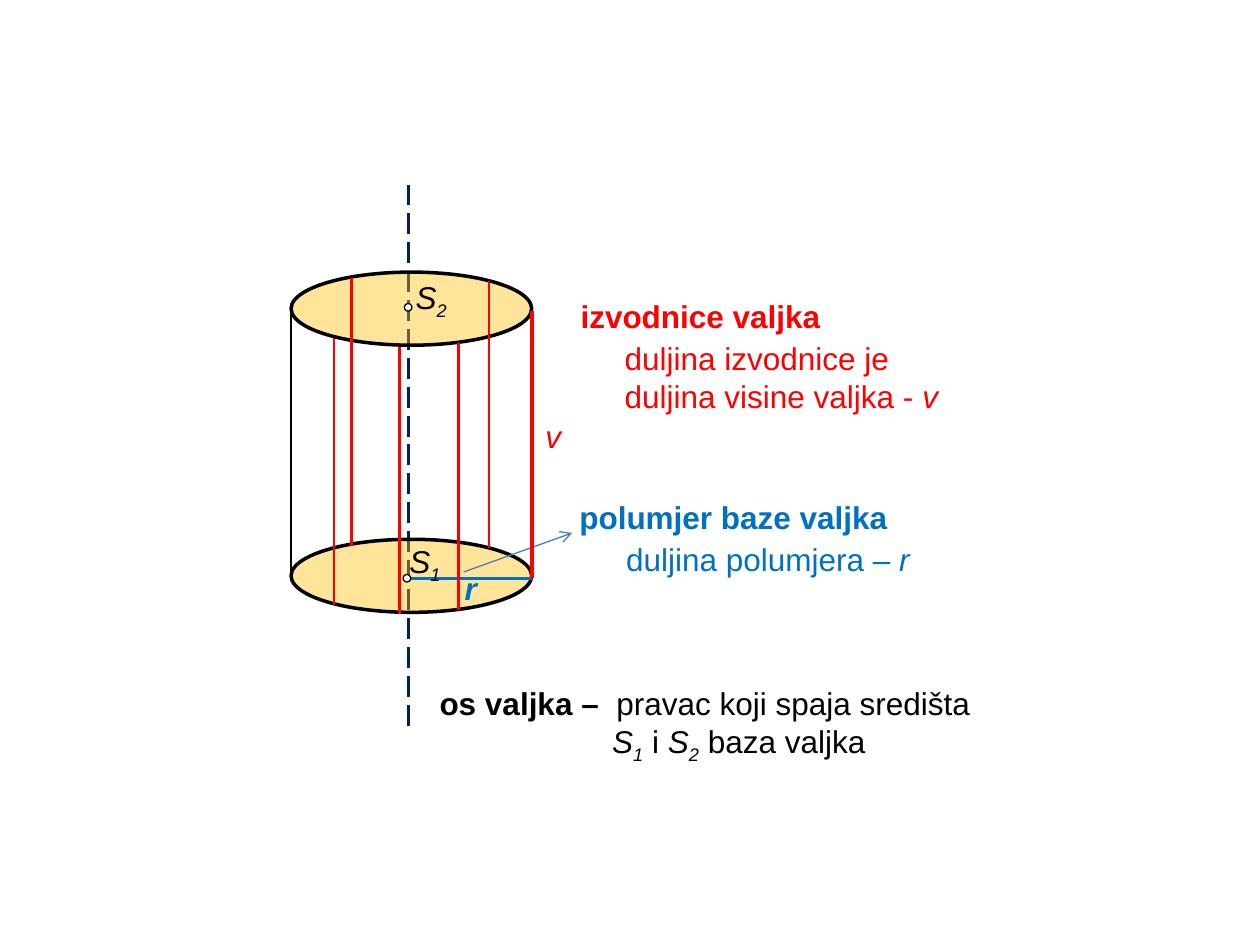
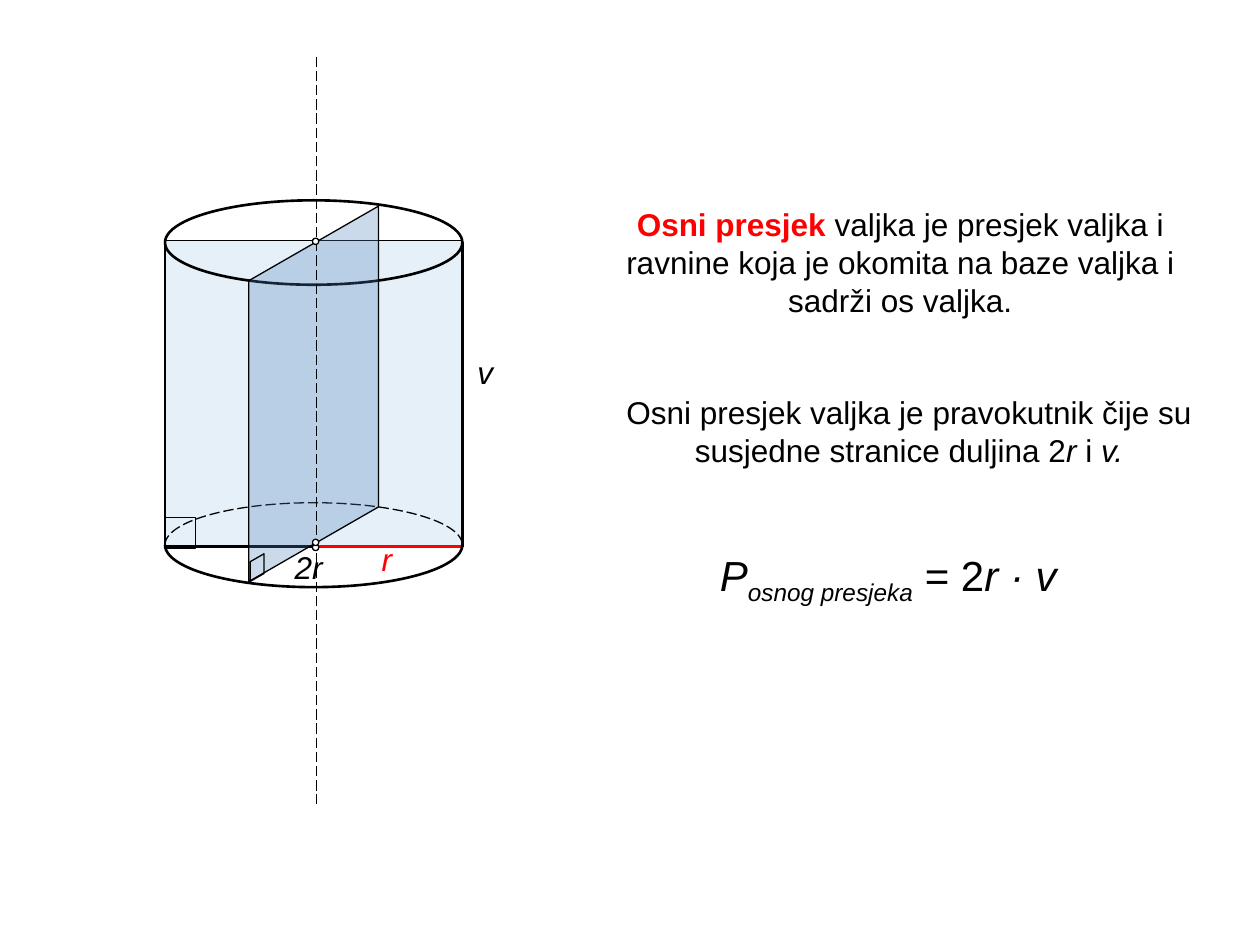
"""Build two slides about the parts and the axial section of a cylinder."""
from dataclasses import dataclass

from lxml.etree import SubElement
from pptx import Presentation
from pptx.dml.color import RGBColor
from pptx.enum.dml import MSO_LINE
from pptx.enum.shapes import MSO_CONNECTOR, MSO_SHAPE
from pptx.enum.text import MSO_AUTO_SIZE, PP_ALIGN
from pptx.oxml.ns import qn
from pptx.util import Inches, Pt


@dataclass(frozen=True)
class Theme:
    """Hold the colours, font, type sizes and line widths of the deck."""

    font: str = "Arial"
    body: int = 18
    formula: int = 24
    black: str = "000000"
    white: str = "FFFFFF"
    red: str = "FF0000"
    blue: str = "0070C0"
    navy: str = "002060"
    amber: str = "FFC000"
    steel: str = "4F81BD"
    arrow: str = "4B7EBC"
    thin: float = 0.75
    medium: float = 1.5
    thick: float = 2
    heavy: float = 2.25


@dataclass(frozen=True)
class Box:
    """Describe a region in inches."""

    left: float
    top: float
    width: float
    height: float

    def inner(self, x, y, width, height):
        """Return a box placed relative to this one."""
        return Box(self.left + x, self.top + y, width, height)

    def lengths(self):
        """Return the four measures as slide lengths."""
        return [Inches(n) for n in (self.left, self.top, self.width, self.height)]


THEME = Theme()


def set_line(line, colour, width, dashed=False):
    """Give a line its colour, width and dash."""
    line.color.rgb = RGBColor.from_string(colour)
    line.width = Pt(width)
    if dashed:
        line.dash_style = MSO_LINE.LONG_DASH


def add_line(page, box, start, end, colour=THEME.black, width=THEME.medium,
             dashed=False, arrow=False):
    """Draw a straight line between two points of a box."""
    x1, y1, x2, y2 = (Inches(n) for n in (
        box.left + start[0], box.top + start[1], box.left + end[0], box.top + end[1]))
    connector = page.shapes.add_connector(MSO_CONNECTOR.STRAIGHT, x1, y1, x2, y2)
    set_line(connector.line, colour, width, dashed)
    if arrow:
        SubElement(connector.line._get_or_add_ln(), qn("a:tailEnd"), type="arrow")
    SubElement(connector._element.spPr, qn("a:effectLst"))


def add_outline(page, kind, box, width=THEME.thin, fill=None, opacity=100, dashed=False):
    """Draw a preset shape with a black outline and an optional fill."""
    shape = page.shapes.add_shape(kind, *box.lengths())
    shape.shadow.inherit = False
    set_line(shape.line, THEME.black, width, dashed)
    if fill is None:
        shape.fill.background()
        return shape
    shape.fill.solid()
    shape.fill.fore_color.rgb = RGBColor.from_string(fill)
    if opacity < 100:
        colour = shape._element.spPr.find(qn("a:solidFill"))[0]
        SubElement(colour, qn("a:alpha"), val=str(opacity * 1000))
    return shape


def add_arc(page, box, start, end, width=THEME.medium, dashed=False):
    """Draw part of an ellipse between two angles in degrees."""
    arc = add_outline(page, MSO_SHAPE.ARC, box, width, dashed=dashed)
    for index, angle in enumerate((start, end)):
        arc.adjustments[index] = angle * 0.6


def add_slanted(page, box, **style):
    """Draw an upright parallelogram by turning and flipping the preset."""
    shape = add_outline(page, MSO_SHAPE.PARALLELOGRAM, box, **style)
    shape.adjustments[0] = 0.575
    shape.rotation = 90
    shape._element.spPr.get_or_add_xfrm().set("flipV", "1")


def add_point(page, box, x, y, size):
    """Mark a point of a box with a small white circle."""
    add_outline(page, MSO_SHAPE.OVAL, box.inner(x, y, size, size), fill=THEME.white)


def add_text(page, box, spans, colour=THEME.black, size=THEME.body,
             align=None, wrap=True, hanging=0):
    """Write spans of (text, marks), where marks are b, i, s (subscript) and r (red)."""
    frame = page.shapes.add_textbox(*box.lengths()).text_frame
    frame.word_wrap = wrap
    frame.auto_size = MSO_AUTO_SIZE.SHAPE_TO_FIT_TEXT
    para = frame.paragraphs[0]
    para.alignment = align
    if hanging:
        properties = para._p.get_or_add_pPr()
        properties.set("marL", str(Inches(hanging)))
        properties.set("indent", str(-Inches(hanging)))
    for text, marks in spans:
        span = para.add_run()
        span.text = text
        font = span.font
        font.name, font.size = THEME.font, Pt(size)
        font.bold, font.italic = "b" in marks, "i" in marks
        font.color.rgb = RGBColor.from_string(THEME.red if "r" in marks else colour)
        if "s" in marks:
            span._r.get_or_add_rPr().set("baseline", "-25000")


def draw_cylinder(page, box):
    """Draw the cylinder with its axis, bases, radius and generators."""
    base, height = 0.58, 2.12
    add_line(page, box, (0.93, 3.6), (0.93, -0.69), THEME.navy, dashed=True)
    for y in (height, 0):
        add_outline(page, MSO_SHAPE.OVAL, box.inner(0, y, box.width, base),
                    THEME.thick, THEME.amber, 40)
    for x in (box.width, 0):
        add_line(page, box, (x, height + base / 2), (x, base / 2))
    add_line(page, box, (box.width, 2.43), (0.92, 2.43), THEME.blue)
    add_point(page, box, 0.89, 2.4, 0.06)
    add_line(page, box, (1.37, 2.38), (2.23, 2.07), THEME.arrow, THEME.thin, arrow=True)
    add_line(page, box, (box.width, 2.43), (box.width, 0.31), THEME.red, THEME.heavy)
    for x, bottom in ((1.33, 2.68), (0.86, 2.71), (0.34, 2.64), (1.57, 2.19), (0.48, 2.17)):
        add_line(page, box, (x, bottom), (x, bottom - height), THEME.red)
    add_point(page, box, 0.9, 0.25, 0.06)
    add_text(page, box.inner(1.92, 1.1, 0.33, 0.4), [("v", "i")], THEME.red, wrap=False)
    add_text(page, box.inner(1.28, 2.31, 0.37, 0.4), [("r", "bi")], THEME.blue, wrap=False)
    for x, y, index in ((0.84, 2.09, "1"), (0.89, 0, "2")):
        add_text(page, box.inner(x, y, 0.46, 0.4), [("S", "i"), (index, "is")], wrap=False)


def write_parts(page, box):
    """Explain the generators, the radius and the axis."""
    add_text(page, box.inner(1.12, 0, 2.67, 0.4), [("izvodnice valjka", "b")], THEME.red)
    add_text(page, box.inner(1.47, 0.33, 3.03, 0.71),
             [("duljina izvodnice je duljina visine valjka - ", ""), ("v", "i")], THEME.red)
    add_text(page, box.inner(1.11, 1.59, 2.67, 0.4), [("polumjer baze valjka", "b")], THEME.blue)
    add_text(page, box.inner(1.48, 1.93, 3.29, 0.4),
             [("duljina polumjera – ", ""), ("r", "i")], THEME.blue)
    add_text(page, box.inner(0, 3.07, box.width, 0.71),
             [("os valjka –  ", "b"), ("pravac koji spaja središta ", ""), ("S", "i"),
              ("1", "is"), (" i ", ""), ("S", "i"), ("2", "is"), (" baza valjka", "")],
             hanging=1.37)


def draw_section(page, box):
    """Draw the cylinder cut by two planes through its axis."""
    base, floor = 0.67, 2.75
    add_outline(page, MSO_SHAPE.RECTANGLE, box.inner(0, 0.32, box.width, 2.43),
                1, THEME.blue, 10)
    add_line(page, box, (1.21, floor), (box.width, floor), THEME.red)
    add_line(page, box, (0, floor), (1.21, floor))
    add_text(page, box.inner(0.93, 2.71, 0.52, 0.4), [("2r", "i")])
    add_outline(page, MSO_SHAPE.RECTANGLE, box.inner(0, 2.52, 0.24, 0.24))
    upper = box.inner(0, 0, box.width, base)
    lower = box.inner(0, 2.4, box.width, base)
    for ring in (upper, lower):
        add_arc(page, ring, 0, 180)
    add_arc(page, upper, 180, 0)
    add_arc(page, lower, 180, 0, THEME.thin, dashed=True)
    for x in (0, box.width):
        add_line(page, box, (x, floor), (x, 0.33))
    add_slanted(page, box.inner(-0.31, 1.02, 2.98, 1.03), fill=THEME.steel, opacity=29)
    add_slanted(page, box.inner(0.62, 2.86, 0.22, 0.11))
    add_line(page, box, (1.2, -1.14), (1.2, 4.79), width=THEME.thin, dashed=True)
    for y in (2.73, 2.69, 0.3):
        add_point(page, box, 1.17, y, 0.05)
    add_text(page, box.inner(2.38, 1.16, 0.3, 0.4), [("v", "i")])
    add_text(page, box.inner(1.62, 2.65, 0.3, 0.4), [("r", "i")], THEME.red)


def write_section(page, box):
    """Define the axial section and give its area."""
    centre = PP_ALIGN.CENTER
    add_text(page, box.inner(0, 0, box.width, 1.01),
             [("Osni presjek ", "br"),
              ("valjka je presjek valjka i ravnine koja je okomita na baze valjka "
               "i sadrži os valjka.", "")], align=centre)
    add_text(page, box.inner(0.15, 1.49, 4.93, 0.71),
             [("Osni presjek valjka je pravokutnik čije su susjedne stranice duljina 2", ""),
              ("r", "i"), (" i ", ""), ("v.", "i")], align=centre)
    add_text(page, box.inner(0.81, 2.73, 3.28, 0.51),
             [("P", "i"), ("osnog presjeka", "is"), (" = 2", ""), ("r · v", "i")],
             size=THEME.formula, align=centre)


def main():
    """Build the deck and save it."""
    deck = Presentation()
    deck.slide_width, deck.slide_height = Inches(10), Inches(7.5)
    blank = deck.slide_layouts[6]
    page = deck.slides.add_slide(blank)
    draw_cylinder(page, Box(2.31, 2.16, 1.91, 2.7))
    write_parts(page, Box(3.39, 2.31, 4.42, 3.78))
    page = deck.slides.add_slide(blank)
    draw_section(page, Box(1.31, 1.59, 2.36, 3.07))
    write_section(page, Box(4.6, 1.58, 5.09, 3.24))
    deck.save("out.pptx")


if __name__ == "__main__":
    main()
